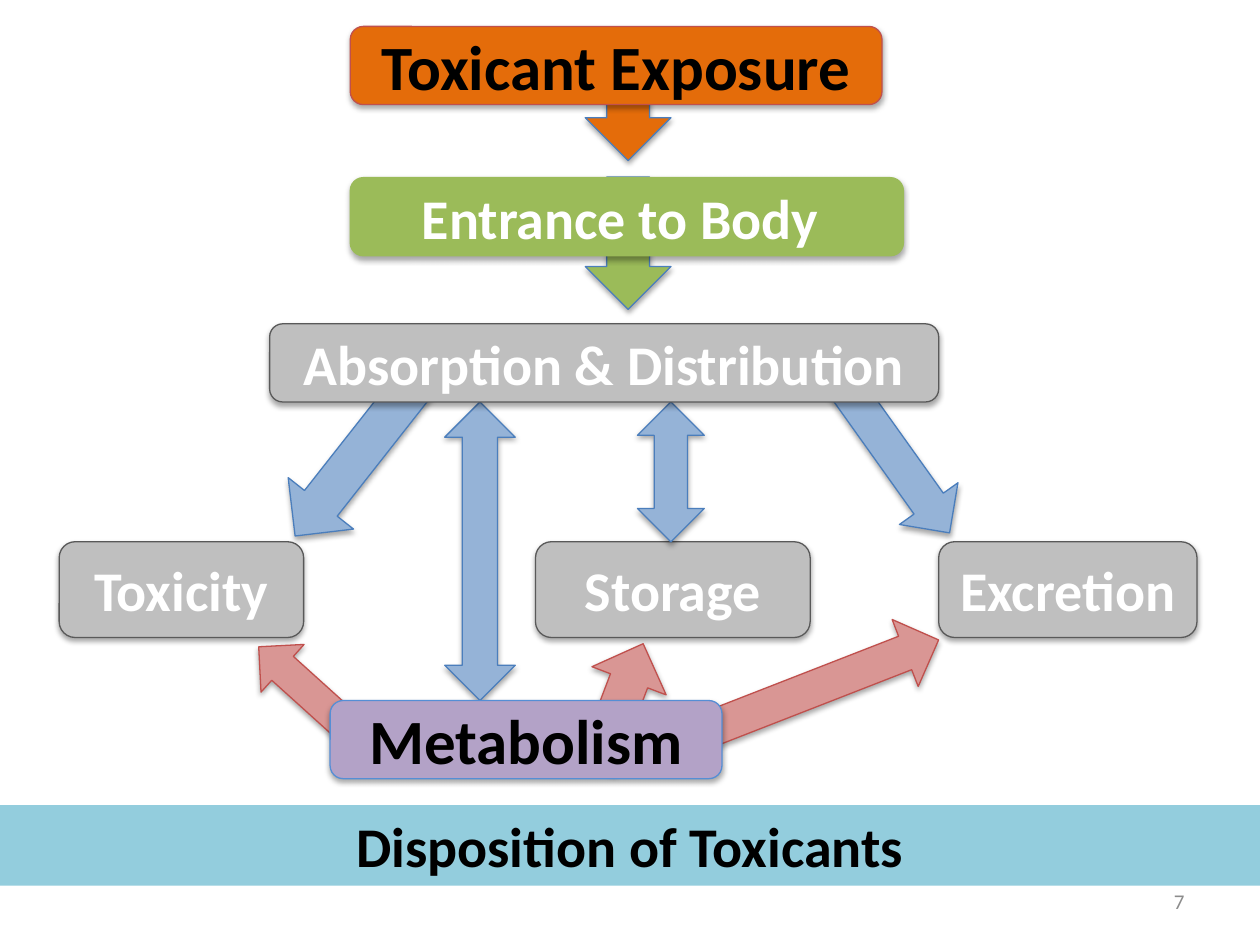
from dataclasses import dataclass

from lxml import etree
from pptx import Presentation
from pptx.dml.color import RGBColor
from pptx.enum import shapes, text
from pptx.oxml import ns
from pptx.util import Inches, Pt

SHAPE = shapes.MSO_SHAPE
ALIGN = text.PP_ALIGN


@dataclass(frozen=True)
class Theme:
    """Colours, font and type sizes of the slide."""
    font: str = "Calibri"
    black: str = "000000"
    white: str = "FFFFFF"
    number: str = "8C8C8C"
    orange: str = "E46C0A"
    green: str = "9BBB59"
    grey: str = "BFBFBF"
    grey_line: str = "595959"
    blue: str = "95B3D7"
    blue_line: str = "4B7EBC"
    pink: str = "D99694"
    red_line: str = "C0504D"
    purple: str = "B3A2C7"
    purple_line: str = "558ED5"
    banner: str = "93CDDD"
    large: int = 36
    medium: int = 32
    small: int = 12


T = Theme()


def rgb(color):
    """Turn a hex string into a colour."""
    return RGBColor.from_string(color)


def add_shadow(sp):
    """Give a shape a soft shadow straight below it."""
    sp.shadow.inherit = False
    effects = sp._element.spPr.find(ns.qn("a:effectLst"))
    outer = etree.SubElement(effects, ns.qn("a:outerShdw"), blurRad="40000",
                             dist="23000", dir="5400000", rotWithShape="0")
    color = etree.SubElement(outer, ns.qn("a:srgbClr"), val=T.black)
    etree.SubElement(color, ns.qn("a:alpha"), val="35000")


def set_text(sp, words, size, color, bold=True, align=ALIGN.CENTER,
             anchor=text.MSO_ANCHOR.MIDDLE):
    """Write one styled line of text in a shape."""
    tf = sp.text_frame
    tf.text = words
    tf.word_wrap = True
    tf.vertical_anchor = anchor
    p = tf.paragraphs[0]
    p.alignment = align
    font = p.runs[0].font
    font.name, font.size, font.bold = T.font, Pt(size), bold
    font.color.rgb = rgb(color)


def add_block(s, kind, at, fill, line, rotation=0):
    """Add a filled, outlined and shadowed shape."""
    sp = s.shapes.add_shape(kind, *map(Inches, at))
    sp.rotation = rotation
    sp.fill.solid()
    sp.fill.fore_color.rgb = rgb(fill)
    sp.line.color.rgb = rgb(line)
    sp.line.width = Pt(0.75)
    add_shadow(sp)
    return sp


def add_stage(s, words, at, fill=T.grey, line=T.grey_line, size=T.medium, color=T.white):
    """Add a labelled rounded box."""
    sp = add_block(s, SHAPE.ROUNDED_RECTANGLE, at, fill, line)
    set_text(sp, words, size, color)


def add_arrow(s, at, rotation, fill=T.blue, line=T.blue_line):
    """Add a one-way block arrow turned to its direction."""
    add_block(s, SHAPE.RIGHT_ARROW, at, fill, line, rotation)


def add_banner(s, words):
    """Add the full-width title band."""
    sp = s.shapes.add_textbox(*map(Inches, (0, 6.39, 10, 0.64)))
    sp.fill.solid()
    sp.fill.fore_color.rgb = rgb(T.banner)
    set_text(sp, words, T.medium, T.black, anchor=text.MSO_ANCHOR.TOP)
    sp.text_frame.auto_size = text.MSO_AUTO_SIZE.SHAPE_TO_FIT_TEXT


def add_number(s, number):
    """Add the slide number."""
    sp = s.shapes.add_textbox(*map(Inches, (7.17, 6.95, 2.33, 0.4)))
    set_text(sp, number, T.small, T.number, bold=False, align=ALIGN.RIGHT)


def main():
    """Build the slide and save it."""
    prs = Presentation()
    prs.slide_width, prs.slide_height = Inches(10), Inches(7.5)
    s = prs.slides.add_slide(prs.slide_layouts[6])

    add_number(s, "7")
    for words, left, width in (("Excretion", 7.45, 2.05), ("Storage", 4.25, 2.18),
                               ("Toxicity", 0.47, 1.94)):
        add_stage(s, words, (left, 4.3, width, 0.76))

    add_arrow(s, (4.46, 1.59, 1.05, 0.68), 90, T.green)
    add_arrow(s, (4.52, 0.47, 0.93, 0.68), 90, T.orange)
    add_arrow(s, (2.02, 3.26, 1.69, 0.66), 128.2)
    add_arrow(s, (6.09, 3.2, 1.83, 0.57), 54.5)
    for left, width, height in ((5.06, 0.53, 1.11), (3.53, 0.56, 2.37)):
        add_block(s, SHAPE.UP_DOWN_ARROW, (left, 3.19, width, height), T.blue, T.blue_line)

    add_stage(s, "Absorption & Distribution", (2.14, 2.57, 5.31, 0.62))
    add_stage(s, "Entrance to Body ", (2.78, 1.41, 4.39, 0.62), T.green, T.green)
    add_stage(s, "Toxicant Exposure", (2.78, 0.21, 4.22, 0.62),
              T.orange, T.red_line, T.large, T.black)
    add_banner(s, "Disposition of Toxicants")

    for at, rotation in (((1.91, 5.25, 1.11, 0.51), 222.1),
                         ((4.4, 5.28, 1.04, 0.63), 290.8),
                         ((5.45, 5.17, 2.07, 0.57), 338.7)):
        add_arrow(s, at, rotation, T.pink, T.red_line)
    add_stage(s, "Metabolism", (2.62, 5.56, 3.11, 0.62),
              T.purple, T.purple_line, T.large, T.black)

    prs.save("out.pptx")


if __name__ == "__main__":
    main()
